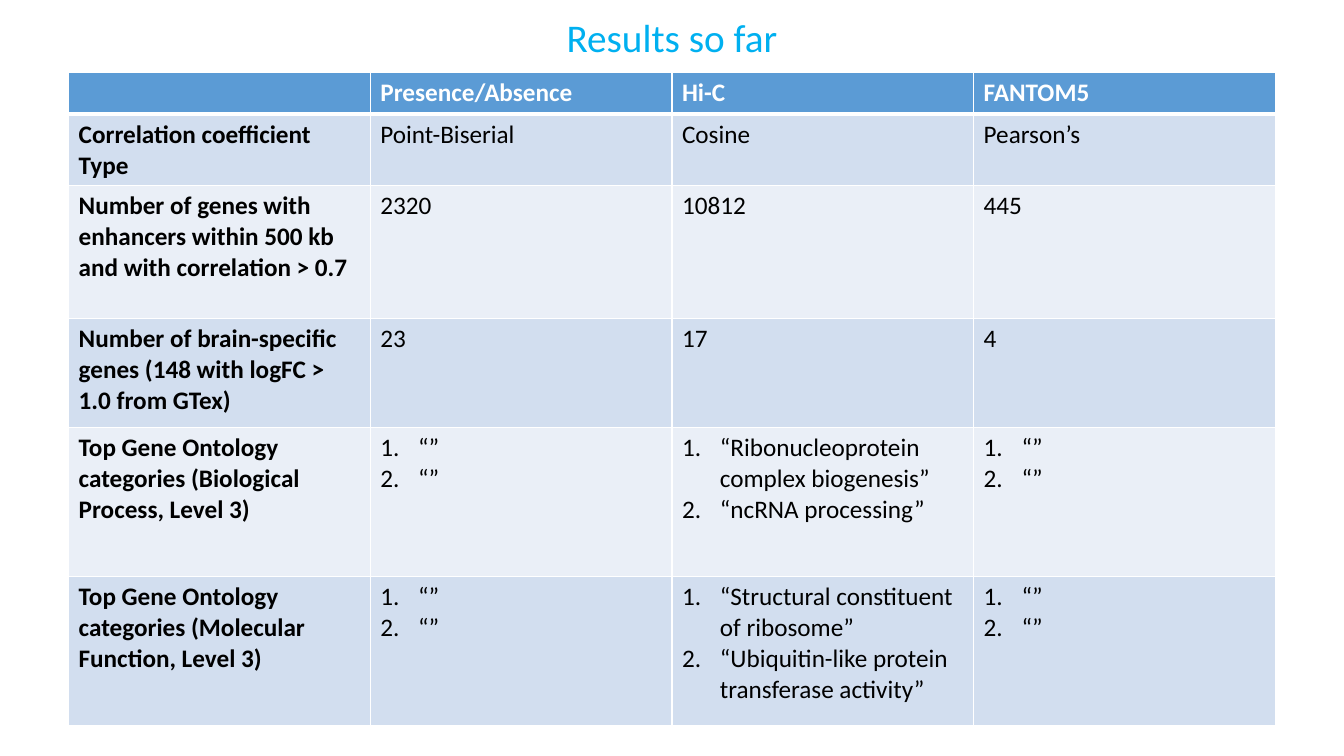
from lxml import etree
from pptx import Presentation
from pptx.dml.color import RGBColor
from pptx.enum import text
from pptx.oxml import ns
from pptx.util import Pt

COLORS = {
    "title": "00B0F0",
    "header": "5B9BD5",
    "dark_band": "D2DEEF",
    "light_band": "EAEFF7",
    "white": "FFFFFF",
    "black": "000000",
}
ROW_HEIGHTS = [30, 51, 95, 78, 106.5, 106.5]
COLUMN_WIDTH = 215.5
LIST_INDENT = Pt(27)

EMPTY_LIST = ["“”", "“”"]
# A list in a cell becomes numbered paragraphs.
ROWS = [
    ["", "Presence/Absence", "Hi-C", "FANTOM5"],
    ["Correlation coefficient Type", "Point-Biserial", "Cosine", "Pearson’s"],
    ["Number of genes with enhancers within 500 kb and with correlation > 0.7",
     "2320", "10812", "445"],
    ["Number of brain-specific genes (148 with logFC > 1.0 from GTex)",
     "23", "17", "4"],
    ["Top Gene Ontology categories (Biological Process, Level 3)",
     EMPTY_LIST,
     ["“Ribonucleoprotein complex biogenesis”", "“ncRNA processing”"],
     EMPTY_LIST],
    ["Top Gene Ontology categories (Molecular Function, Level 3)",
     EMPTY_LIST,
     ["“Structural constituent of ribosome”",
      "“Ubiquitin-like protein transferase activity”"],
     EMPTY_LIST],
]


def write(para, words, color, **formats):
    span = para.add_run()
    span.text = words
    span.font.color.rgb = RGBColor.from_string(COLORS[color])
    for name, value in {"name": "Calibri", **formats}.items():
        setattr(span.font, name, value)


def add_border(cell, side, width):
    """Draw a white line on one side (L, R, T or B) of a cell."""
    properties = cell._tc.get_or_add_tcPr()
    line = etree.SubElement(properties, ns.qn("a:ln" + side), w=str(Pt(width)))
    fill = etree.SubElement(line, ns.qn("a:solidFill"))
    etree.SubElement(fill, ns.qn("a:srgbClr"), val=COLORS["white"])


deck = Presentation()
deck.slide_width, deck.slide_height = Pt(960), Pt(540)
page = deck.slides.add_slide(deck.slide_layouts[6])

# Title
title = page.shapes.add_textbox(Pt(66), Pt(5.75), Pt(828), Pt(46)).text_frame
title.word_wrap = True
title.vertical_anchor = text.MSO_ANCHOR.MIDDLE
heading = title.paragraphs[0]
heading.alignment = text.PP_ALIGN.CENTER
heading.line_spacing = 0.9
write(heading, "Results so far", "title", size=Pt(28))

# Results table
column_count = len(ROWS[0])
table = page.shapes.add_table(
    len(ROWS), column_count, Pt(49), Pt(51.6),
    Pt(COLUMN_WIDTH * column_count), Pt(sum(ROW_HEIGHTS))).table
for column in table.columns:
    column.width = Pt(COLUMN_WIDTH)

for r, (entries, height) in enumerate(zip(ROWS, ROW_HEIGHTS)):
    table.rows[r].height = Pt(height)
    band = "header" if r == 0 else "dark_band" if r % 2 else "light_band"
    borders = {"L": 1, "R": 1, "T": 3 if r == 1 else 1, "B": 3 if r == 0 else 1}
    for c, entry in enumerate(entries):
        cell = table.cell(r, c)
        for side, width in borders.items():
            add_border(cell, side, width)
        cell.fill.solid()
        cell.fill.fore_color.rgb = RGBColor.from_string(COLORS[band])

        numbered = isinstance(entry, list)
        frame = cell.text_frame
        for i, words in enumerate(entry if numbered else [entry]):
            para = frame.add_paragraph() if i else frame.paragraphs[0]
            para.font.size = Pt(18)
            if numbered:
                layout = para._p.get_or_add_pPr()
                layout.set("marL", str(LIST_INDENT))
                layout.set("indent", str(-LIST_INDENT))
                number = etree.Element(ns.qn("a:buAutoNum"), type="arabicPeriod")
                layout.insert(0, number)
            if words:
                write(para, words, "black" if r else "white",
                      size=Pt(18), bold=r == 0 or c == 0)

deck.save("out.pptx")
